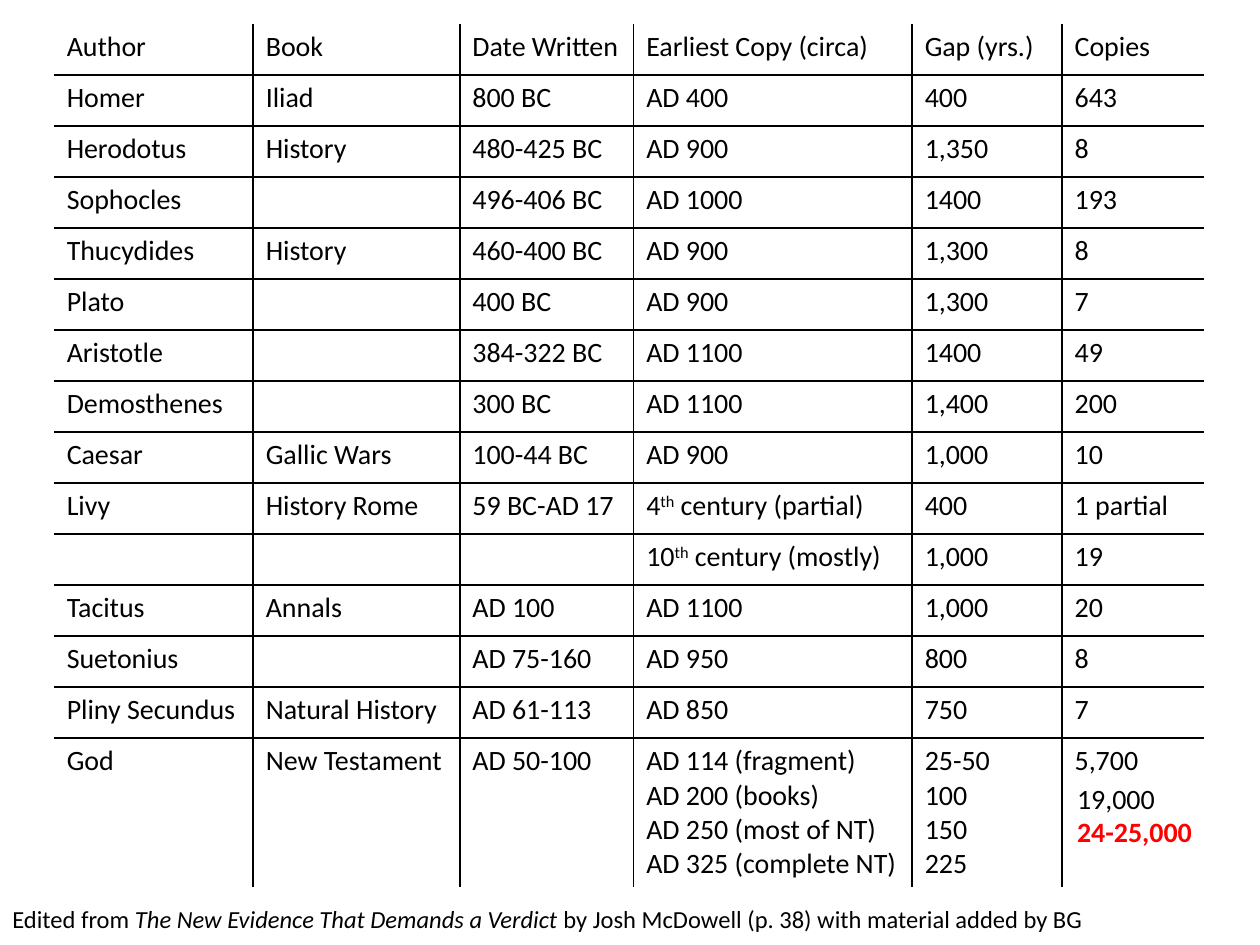
"""Build a slide comparing the manuscript evidence for ancient works."""
from dataclasses import dataclass
from typing import NamedTuple

import pptx
import pptx.dml.color
import pptx.oxml
import pptx.oxml.ns
import pptx.util


@dataclass(frozen=True)
class Theme:
    font: str = "Calibri"
    table_size: int = 16
    note_size: int = 14
    ink: str = "000000"
    accent: str = "FF0000"
    border_pt: int = 1
    plain_table: str = "{2D5ABB26-0587-4C30-8999-92F81FD0307C}"


class Span(NamedTuple):
    text: str
    italic: bool = False
    raised: bool = False


class Line(NamedTuple):
    spans: tuple[Span, ...]
    size: int
    color: str
    bold: bool = False


class Box(NamedTuple):
    left: float
    top: float
    width: float
    height: float


THEME = Theme()
SLIDE_W, SLIDE_H = 10, 7.5
TABLE = Box(0.43, 0.19, 9.14, 6.84)
COLUMNS = (1.58, 1.64, 1.38, 2.21, 1.19, 1.13)
ROW_H = 0.405
ROWS = (
    ("Author", "Book", "Date Written", "Earliest Copy (circa)", "Gap (yrs.)", "Copies"),
    ("Homer", "Iliad", "800 BC", "AD 400", "400", "643"),
    ("Herodotus", "History", "480-425 BC", "AD 900", "1,350", "8"),
    ("Sophocles", "", "496-406 BC", "AD 1000", "1400", "193"),
    ("Thucydides", "History", "460-400 BC", "AD 900", "1,300", "8"),
    ("Plato", "", "400 BC", "AD 900", "1,300", "7"),
    ("Aristotle", "", "384-322 BC", "AD 1100", "1400", "49"),
    ("Demosthenes", "", "300 BC", "AD 1100", "1,400", "200"),
    ("Caesar", "Gallic Wars", "100-44 BC", "AD 900", "1,000", "10"),
    ("Livy", "History Rome", "59 BC-AD 17",
     (Span("4"), Span("th", raised=True), Span(" century (partial)")), "400", "1 partial"),
    ("", "", "",
     (Span("10"), Span("th", raised=True), Span(" century (mostly)")), "1,000", "19"),
    ("Tacitus", "Annals", "AD 100", "AD 1100", "1,000", "20"),
    ("Suetonius", "", "AD 75-160", "AD 950", "800", "8"),
    ("Pliny Secundus", "Natural History", "AD 61-113", "AD 850", "750", "7"),
    ("God", "New Testament", "AD 50-100",
     "AD 114 (fragment)\nAD 200 (books)\nAD 250 (most of NT)\nAD 325 (complete NT)",
     "25-50\n100\n150\n225", "5,700"),
)
NOTE = (
    Span("Edited from "),
    Span("The New Evidence That Demands a Verdict", italic=True),
    Span(" by Josh McDowell (p. 38) with material added by BG"),
)


def write_lines(tf, lines: list[Line]) -> None:
    for i, line in enumerate(lines):
        p = tf.add_paragraph() if i else tf.paragraphs[0]
        p.font.name = THEME.font
        p.font.size = pptx.util.Pt(line.size)
        p.font.bold = line.bold
        p.font.color.rgb = pptx.dml.color.RGBColor.from_string(line.color)
        for span in line.spans:
            r = p.add_run()
            r.text = span.text
            if span.italic:
                r.font.italic = True
            if span.raised:
                r._r.get_or_add_rPr().set("baseline", "30000")


def cell_lines(content: str | tuple[Span, ...]) -> list[Line]:
    if isinstance(content, str):
        groups = [(Span(text),) if text else () for text in content.split("\n")]
    else:
        groups = [content]
    return [Line(spans, THEME.table_size, THEME.ink) for spans in groups]


def add_borders(cell, sides: list[str]) -> None:
    tc_pr = cell._tc.get_or_add_tcPr()
    width = pptx.util.Pt(THEME.border_pt)
    for i, side in enumerate(sides):
        tc_pr.insert(i, pptx.oxml.parse_xml(
            f'<a:ln{side} {pptx.oxml.ns.nsdecls("a")} w="{width}"><a:solidFill>'
            f'<a:srgbClr val="{THEME.ink}"/></a:solidFill></a:ln{side}>'))


def add_manuscript_table(s) -> None:
    last_row, last_col = len(ROWS) - 1, len(COLUMNS) - 1
    table = s.shapes.add_table(len(ROWS), len(COLUMNS), *map(pptx.util.Inches, TABLE)).table
    table.first_row = table.horz_banding = False
    style = table._tbl.tblPr.find(pptx.oxml.ns.qn("a:tableStyleId"))
    style.text = THEME.plain_table
    for column, width in zip(table.columns, COLUMNS):
        column.width = pptx.util.Inches(width)
    for y, (row, contents) in enumerate(zip(table.rows, ROWS)):
        row.height = pptx.util.Inches(
            ROW_H if y < last_row else TABLE.height - ROW_H * last_row)
        for x, content in enumerate(contents):
            cell = table.cell(y, x)
            cell.fill.background()
            inner = {"L": x > 0, "R": x < last_col, "T": y > 0, "B": y < last_row}
            add_borders(cell, [side for side, shown in inner.items() if shown])
            write_lines(cell.text_frame, cell_lines(content))


def add_text(s, box: Box, lines: list[Line]) -> None:
    tf = s.shapes.add_textbox(*map(pptx.util.Inches, box)).text_frame
    tf.word_wrap = True
    write_lines(tf, lines)


def main() -> None:
    prs = pptx.Presentation()
    prs.slide_width = pptx.util.Inches(SLIDE_W)
    prs.slide_height = pptx.util.Inches(SLIDE_H)
    s = prs.slides.add_slide(prs.slide_layouts[6])
    add_manuscript_table(s)
    add_text(s, Box(0, 0.95 * SLIDE_H, SLIDE_W, 0.34),
             [Line(NOTE, THEME.note_size, THEME.ink)])
    add_text(s, Box(8.45, 0.82 * SLIDE_H, 1.42, 0.64), [
        Line((Span("19,000"),), THEME.table_size, THEME.ink),
        Line((Span("24-25,000"),), THEME.table_size, THEME.accent, bold=True),
    ])
    prs.save("out.pptx")


if __name__ == "__main__":
    main()
